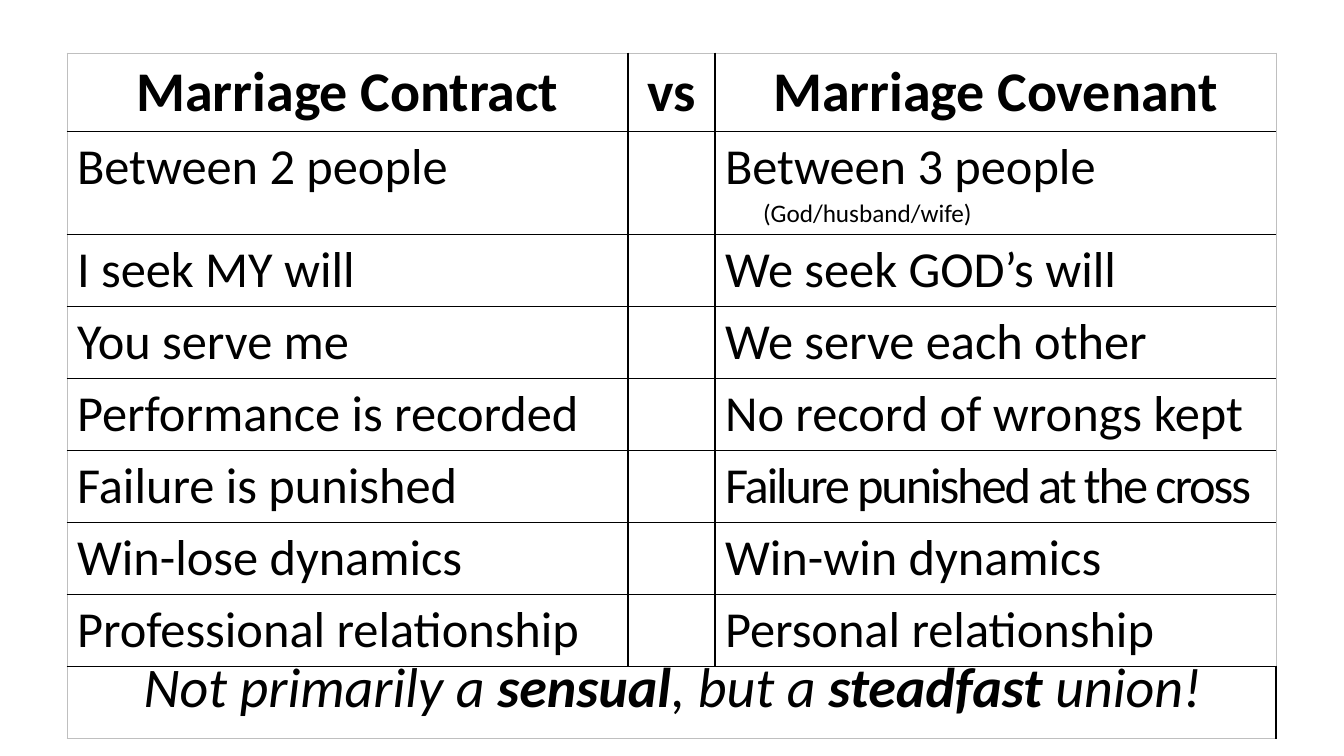
"""Build the slide that compares a marriage contract with a marriage covenant."""

from dataclasses import dataclass

from lxml.etree import SubElement
from pptx import Presentation
from pptx.dml.color import RGBColor
from pptx.enum.text import PP_ALIGN
from pptx.oxml.ns import qn
from pptx.util import Emu, Pt

EMU_PER_PX = 9071.43
FONT = "Calibri"
BLACK = "000000"
GREY = "BFBFBF"
HEADER_HEIGHT, NOTE_HEIGHT, ROW_HEIGHT = 78, 103, 72
COLUMN_WIDTHS = (561, 87, 561)
HANGING_INDENT = 38


@dataclass(frozen=True)
class Contrast:
    contract: str
    covenant: str
    note: str = ""
    spacing: int = 0


@dataclass(frozen=True)
class Phrase:
    text: str
    bold: bool = False


HEADINGS = ("Marriage Contract", "vs", "Marriage Covenant")
CONTRASTS = (
    Contrast("Between 2 people", "Between 3 people ", note="(God/husband/wife)"),
    Contrast("I seek MY will", "We seek GOD’s will"),
    Contrast("You serve me", "We serve each other"),
    Contrast("Performance is recorded", "No record of wrongs kept"),
    Contrast("Failure is punished", "Failure punished at the cross", spacing=-150),
    Contrast("Win-lose dynamics", "Win-win dynamics"),
    Contrast("Professional relationship", "Personal relationship"),
)
CONCLUSION = (
    Phrase("Not primarily a "),
    Phrase("sensual", bold=True),
    Phrase(", but a "),
    Phrase("steadfast", bold=True),
    Phrase(" union!"),
)


def px(length: int) -> Emu:
    return Emu(round(length * EMU_PER_PX))


def color(value: str) -> RGBColor:
    return RGBColor.from_string(value)


def style_paragraph(paragraph, size: int, bold: bool = False, centred: bool = False) -> None:
    paragraph.font.name = FONT
    paragraph.font.size = Pt(size)
    paragraph.font.bold = bold
    paragraph.font.color.rgb = color(BLACK)
    paragraph.alignment = PP_ALIGN.CENTER if centred else PP_ALIGN.LEFT


def set_border(cell, side: str, value: str, width: float) -> None:
    properties = cell._tc.get_or_add_tcPr()
    line = SubElement(properties, qn(f"a:{side}"), w=str(Pt(width)))
    fill = SubElement(line, qn("a:solidFill"))
    SubElement(fill, qn("a:srgbClr"), val=value)


def style_cells(table) -> None:
    last_row, last_column = len(table.rows) - 1, len(table.columns) - 1
    for row in range(last_row + 1):
        for column in range(last_column + 1):
            cell = table.cell(row, column)
            outer_sides = {
                "lnL": column == 0,
                "lnR": column == last_column,
                "lnT": row == 0,
                "lnB": row == last_row,
            }
            for side, outer in outer_sides.items():
                set_border(cell, side, GREY if outer else BLACK, 0.5 if outer else 1)
            cell.fill.background()


def fill_contrast(table, row: int, contrast: Contrast) -> None:
    contract = table.cell(row, 0).text_frame.paragraphs[0]
    contract.text = contrast.contract
    style_paragraph(contract, 36)
    covenant = table.cell(row, 2).text_frame.paragraphs[0]
    style_paragraph(covenant, 36)
    run = covenant.add_run()
    run.text = contrast.covenant
    if contrast.spacing:
        run._r.get_or_add_rPr().set("spc", str(contrast.spacing))
    if contrast.note:
        note = covenant.add_run()
        note.text = contrast.note
        note.font.size = Pt(18)
        properties = covenant._p.get_or_add_pPr()
        properties.set("marL", str(px(HANGING_INDENT)))
        properties.set("indent", str(-px(HANGING_INDENT)))


def add_comparison(slide) -> None:
    heights = [HEADER_HEIGHT]
    heights += [NOTE_HEIGHT if contrast.note else ROW_HEIGHT for contrast in CONTRASTS]
    heights.append(ROW_HEIGHT)
    frame = slide.shapes.add_table(
        len(heights), len(COLUMN_WIDTHS), px(67), px(53), px(sum(COLUMN_WIDTHS)), px(sum(heights))
    )
    table = frame.table
    table.first_row = False
    table.horz_banding = False
    for column, width in zip(table.columns, COLUMN_WIDTHS):
        column.width = px(width)
    for row, height in zip(table.rows, heights):
        row.height = px(height)
    style_cells(table)
    for column, heading in enumerate(HEADINGS):
        paragraph = table.cell(0, column).text_frame.paragraphs[0]
        paragraph.text = heading
        style_paragraph(paragraph, 40, bold=True, centred=True)
    for row, contrast in enumerate(CONTRASTS, start=1):
        fill_contrast(table, row, contrast)
    last_row = len(heights) - 1
    table.cell(last_row, 0).merge(table.cell(last_row, len(COLUMN_WIDTHS) - 1))


def add_conclusion(slide) -> None:
    box = slide.shapes.add_textbox(px(78), px(647), px(1189), px(78))
    box.text_frame.word_wrap = True
    paragraph = box.text_frame.paragraphs[0]
    style_paragraph(paragraph, 40, centred=True)
    paragraph.font.italic = True
    for phrase in CONCLUSION:
        run = paragraph.add_run()
        run.text = phrase.text
        if phrase.bold:
            run.font.bold = True


def main() -> None:
    presentation = Presentation()
    presentation.slide_width = px(1344)
    presentation.slide_height = px(756)
    slide = presentation.slides.add_slide(presentation.slide_layouts[6])
    add_comparison(slide)
    add_conclusion(slide)
    presentation.save("out.pptx")


if __name__ == "__main__":
    main()
